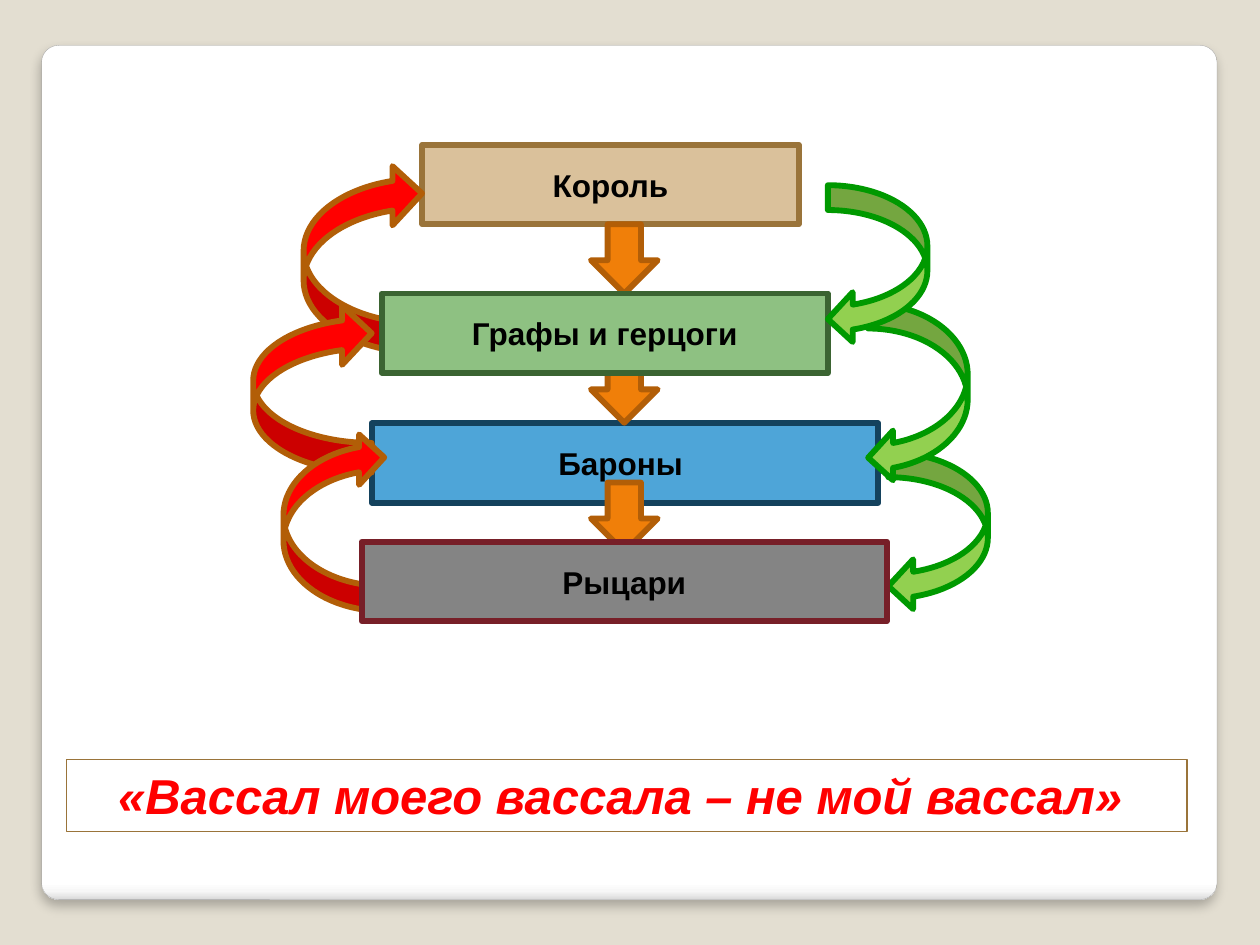
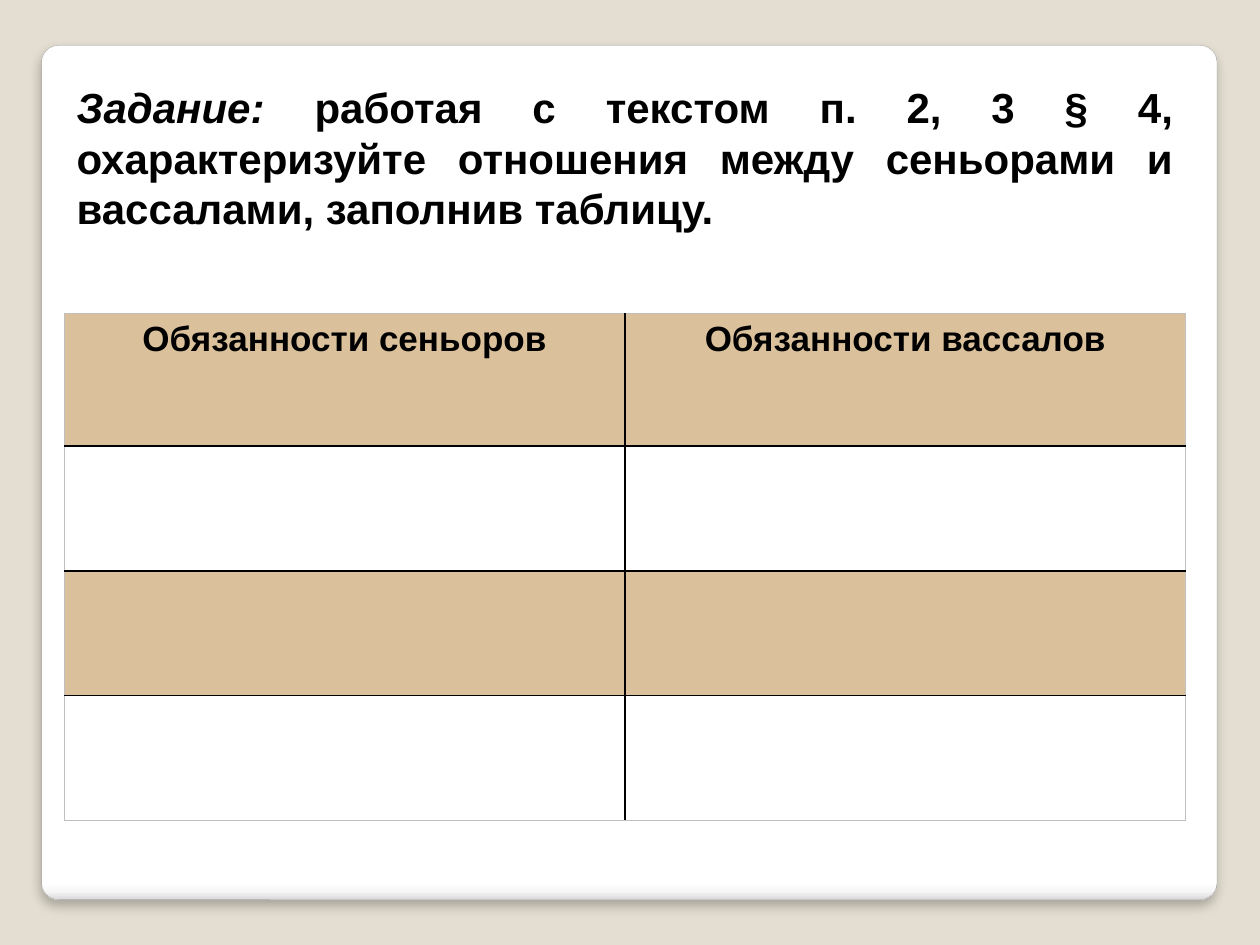
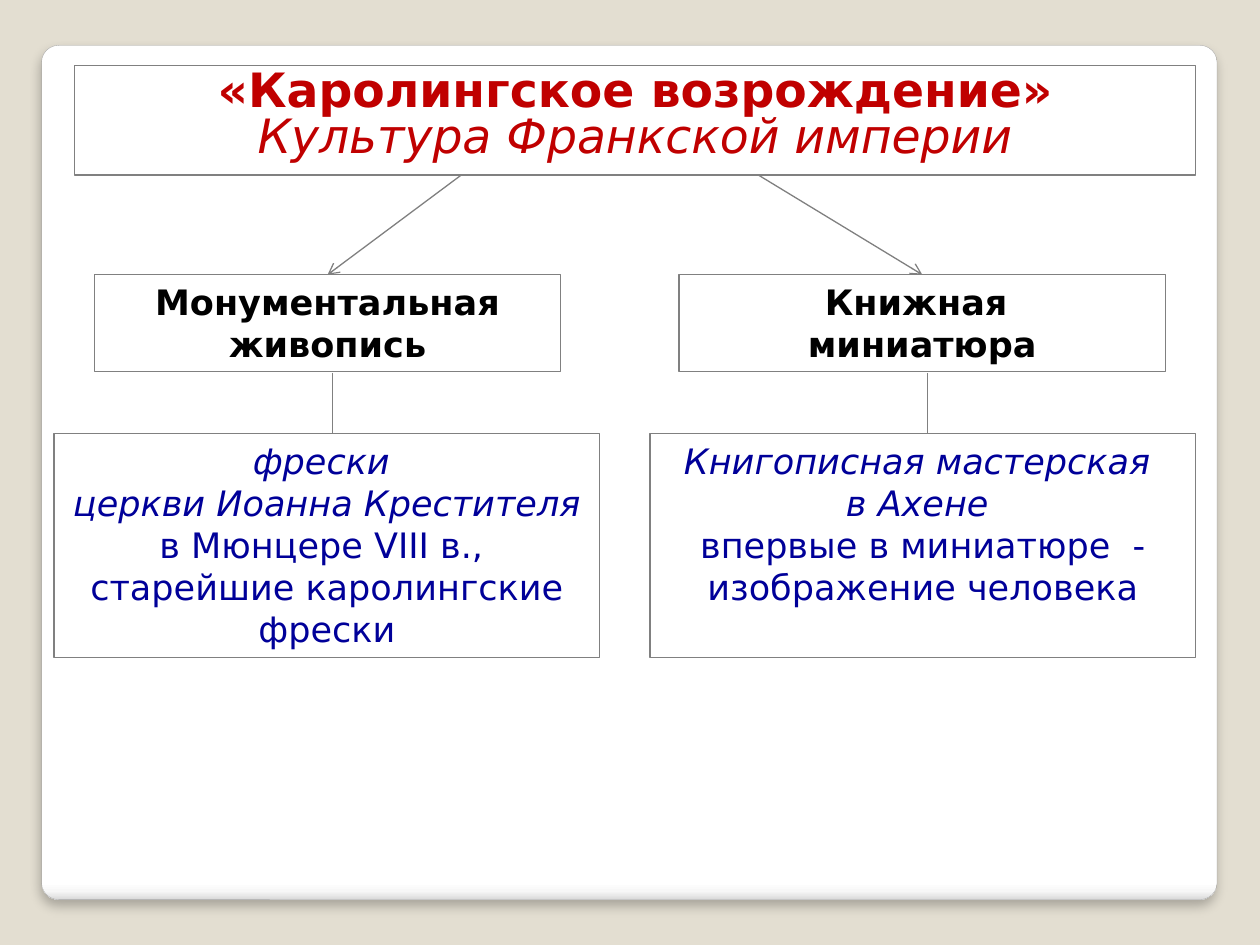
import lxml.etree
import pptx
import pptx.dml.color
import pptx.enum.shapes
import pptx.enum.text
import pptx.oxml.ns
import pptx.util

SLIDE_WIDTH = pptx.util.Inches(10)
SLIDE_HEIGHT = pptx.util.Inches(7.5)
COLUMN = SLIDE_WIDTH / 10
ROW = SLIDE_HEIGHT / 7.5
SHAPES = pptx.enum.shapes.MSO_SHAPE
ALIGN = pptx.enum.text.PP_ALIGN
ANCHOR = pptx.enum.text.MSO_ANCHOR

COLOURS = {
    "background": "E3DED1",
    "white": "FFFFFF",
    "panel_edge": "A4A4A4",
    "black": "000000",
    "sand": "DAC19B",
    "brown": "9A743A",
    "leaf": "8EC182",
    "forest": "3B6432",
    "sky": "4EA5D8",
    "navy": "14425D",
    "grey": "848484",
    "wine": "771F28",
    "orange": "F07F09",
    "rust": "B25E07",
    "lime": "92D050",
    "green": "009900",
    "red": "FF0000",
    "crimson": "C00000",
    "blue": "000099",
    "rule": "808080",
    "table_edge": "BFBFBF",
}
PANEL_STOPS = [(0, "FFFFFF"), (98, "FFFFFF"), (99, "F7F7F7"), (100, "DADADA")]

RANK_TEXT = {"name": "Arial", "size": 18, "bold": True, "italic": False, "colour": "black"}
QUOTE_TEXT = RANK_TEXT | {"size": 28, "italic": True, "colour": "red"}
TASK_TEXT = RANK_TEXT | {"size": 24}
HEADER_TEXT = RANK_TEXT | {"size": 20}
TITLE_TEXT = {"name": "DejaVu Sans", "size": 27, "bold": True, "italic": False, "colour": "crimson"}
BRANCH_TEXT = TITLE_TEXT | {"size": 20, "colour": "black"}
DETAIL_TEXT = BRANCH_TEXT | {"bold": False, "colour": "blue"}
ITALIC = {"italic": True}

HEAVY = 3.35
THIN = 0.75


def colour(name):
    return pptx.dml.color.RGBColor.from_string(COLOURS[name])


def place(left, top, width, height):
    return [round(value) for value in (left * COLUMN, top * ROW, width * COLUMN, height * ROW)]


def add_tag(parent, tag, **attributes):
    values = {key: str(value) for key, value in attributes.items()}
    return lxml.etree.SubElement(parent, pptx.oxml.ns.qn(tag), values)


def apply_format(target, values):
    for name, value in values.items():
        setattr(target, name, value)


def format_font(font, style):
    values = {key: value for key, value in style.items() if key != "colour"}
    apply_format(font, values | {"size": pptx.util.Pt(style["size"])})
    font.color.rgb = colour(style["colour"])


def write_text(frame, paragraphs, style, alignment=ALIGN.CENTER, spacing=None):
    frame.word_wrap = True
    for index, runs in enumerate(paragraphs):
        paragraph = frame.add_paragraph() if index else frame.paragraphs[0]
        apply_format(paragraph, {"alignment": alignment, "line_spacing": spacing})
        for text, changes in runs:
            run = paragraph.add_run()
            run.text = text
            format_font(run.font, style | changes)


def add_figure(slide, kind, box, fill, line, width, rotation=0):
    shape = slide.shapes.add_shape(kind, *place(*box))
    apply_format(shape, {"rotation": rotation})
    shape.shadow.inherit = False
    if fill:
        shape.fill.solid()
        shape.fill.fore_color.rgb = colour(fill)
    else:
        shape.fill.background()
    shape.line.color.rgb = colour(line)
    shape.line.width = pptx.util.Pt(width)
    return shape


def add_text_box(slide, box, paragraphs, style, line="rule", spacing=None):
    shape = add_figure(slide, SHAPES.RECTANGLE, box, None, line, THIN)
    shape.text_frame.vertical_anchor = ANCHOR.TOP
    write_text(shape.text_frame, paragraphs, style, spacing=spacing)


def add_rank(slide, title, box, fill, line):
    shape = add_figure(slide, SHAPES.RECTANGLE, box, fill, line, HEAVY)
    shape.text_frame.vertical_anchor = ANCHOR.MIDDLE
    write_text(shape.text_frame, [[(title, {})]], RANK_TEXT)


def add_service_arrow(slide, box):
    add_figure(slide, SHAPES.CURVED_DOWN_ARROW, box, "red", "rust", HEAVY, 270)


def add_grant_arrow(slide, box):
    add_figure(slide, SHAPES.CURVED_LEFT_ARROW, box, "lime", "green", HEAVY)


def add_link(slide, start, end, arrow=False):
    connector = slide.shapes.add_connector(
        pptx.enum.shapes.MSO_CONNECTOR.STRAIGHT, *place(*start, *end))
    connector.line.color.rgb = colour("rule")
    connector.line.width = pptx.util.Pt(THIN)
    if arrow:
        add_tag(connector.line._get_or_add_ln(), "a:tailEnd", type="arrow")
    add_tag(connector.element.spPr, "a:effectLst")


def add_panel(slide):
    panel = add_figure(slide, SHAPES.ROUNDED_RECTANGLE, (0.33, 0.36, 9.33, 6.78),
                       "white", "panel_edge", 0.16)
    panel.adjustments[0] = 0.02
    panel.fill.gradient()
    panel.fill.gradient_angle = 270
    properties = panel.element.spPr
    stops = properties.find(".//" + pptx.oxml.ns.qn("a:gsLst"))
    for stop in list(stops):
        stops.remove(stop)
    for position, value in PANEL_STOPS:
        add_tag(add_tag(stops, "a:gs", pos=position * 1000), "a:srgbClr", val=value)
    effects = properties.find(pptx.oxml.ns.qn("a:effectLst"))
    shadow = add_tag(effects, "a:outerShdw", blurRad=pptx.util.Pt(6), dist=pptx.util.Pt(4),
                     dir=5400000, algn="t", rotWithShape=0)
    add_tag(add_tag(shadow, "a:srgbClr", val=COLOURS["black"]), "a:alpha", val=25000)


def add_panel_slide(presentation):
    slide = presentation.slides.add_slide(presentation.slide_layouts[6])
    slide.background.fill.solid()
    slide.background.fill.fore_color.rgb = colour("background")
    add_panel(slide)
    return slide


def set_borders(cell, outer_sides):
    properties = cell._tc.get_or_add_tcPr()
    for index, side in enumerate(("lnL", "lnR", "lnT", "lnB")):
        edge, width = ("table_edge", 0.5) if side in outer_sides else ("black", 1)
        line = lxml.etree.Element(pptx.oxml.ns.qn("a:" + side), w=str(pptx.util.Pt(width)))
        add_tag(add_tag(line, "a:solidFill"), "a:srgbClr", val=COLOURS[edge])
        properties.insert(index, line)


def add_duty_table(slide, box, headers, row_heights):
    rows, columns = len(row_heights), len(headers)
    table = slide.shapes.add_table(rows, columns, *place(*box)).table
    apply_format(table, {"first_row": False, "horz_banding": False})
    for row, height in enumerate(row_heights):
        table.rows[row].height = round(height * ROW)
        for column in range(columns):
            cell = table.cell(row, column)
            if row % 2:
                cell.fill.background()
            else:
                cell.fill.solid()
                cell.fill.fore_color.rgb = colour("sand")
            sides = {"lnL": column == 0, "lnR": column == columns - 1,
                     "lnT": row == 0, "lnB": row == rows - 1}
            set_borders(cell, [side for side, outer in sides.items() if outer])
    for column, header in enumerate(headers):
        write_text(table.cell(0, column).text_frame, [[(header, {})]], HEADER_TEXT)


def build_hierarchy(presentation):
    slide = add_panel_slide(presentation)
    add_rank(slide, "Король", (3.35, 1.15, 2.99, 0.63), "sand", "brown")
    add_rank(slide, "Бароны ", (2.95, 3.36, 4.02, 0.63), "sky", "navy")
    for step in range(3):
        add_figure(slide, SHAPES.DOWN_ARROW, (4.69, 1.78 + step * 1.025, 0.53, 0.55),
                   "orange", "rust", HEAVY)
    add_grant_arrow(slide, (7.05, 3.59, 0.79, 1.26))
    add_service_arrow(slide, (2.13, 1.58, 1.5, 0.94))
    add_rank(slide, "Графы и герцоги", (3.03, 2.33, 3.54, 0.63), "leaf", "forest")
    add_service_arrow(slide, (1.81, 2.61, 1.34, 0.94))
    add_service_arrow(slide, (1.94, 3.74, 1.42, 0.8))
    add_grant_arrow(slide, (6.89, 2.41, 0.79, 1.42))
    add_grant_arrow(slide, (6.57, 1.47, 0.79, 1.26))
    add_rank(slide, "Рыцари", (2.87, 4.3, 4.17, 0.63), "grey", "wine")
    add_text_box(slide, (0.53, 6.03, 8.89, 0.57),
                 [[("«Вассал моего вассала – не мой вассал» ", {})]], QUOTE_TEXT, "brown")


def build_task(presentation):
    slide = add_panel_slide(presentation)
    task = slide.shapes.add_textbox(*place(0.51, 0.6, 8.9, 1.31))
    write_text(task.text_frame, [[
        ("Задание:", ITALIC),
        (" работая с текстом п. 2, 3 § 4, охарактеризуйте отношения между сеньорами "
         "и вассалами, заполнив таблицу. ", {}),
    ]], TASK_TEXT, ALIGN.JUSTIFY)
    add_duty_table(slide, (0.51, 2.49, 8.9, 4.02),
                   ["Обязанности сеньоров", "Обязанности вассалов"], [1.05] + [0.99] * 3)


def build_culture(presentation):
    slide = add_panel_slide(presentation)
    add_text_box(slide, (0.59, 0.52, 8.9, 0.87), [
        [("«Каролингское возрождение»", {})],
        [("Культура Франкской империи", {"bold": False, "italic": True})],
    ], TITLE_TEXT, spacing=0.8)
    add_text_box(slide, (0.75, 2.18, 3.7, 0.77),
                 [[("Монументальная живопись", {})]], BRANCH_TEXT)
    add_text_box(slide, (5.39, 2.18, 3.86, 0.77),
                 [[("Книжная ", {})], [("миниатюра", {})]], BRANCH_TEXT)
    add_text_box(slide, (0.43, 3.44, 4.33, 1.78), [
        [("фрески ", ITALIC)],
        [("церкви Иоанна Крестителя ", ITALIC), ("в Мюнцере VIII в., ", {})],
        [("старейшие каролингские фрески", {})],
    ], DETAIL_TEXT)
    add_text_box(slide, (5.16, 3.44, 4.33, 1.78), [
        [("Книгописная мастерская ", ITALIC)],
        [("в Ахене ", ITALIC)],
        [("впервые в миниатюре  - изображение человека", {})],
    ], DETAIL_TEXT)
    add_link(slide, (3.66, 1.39), (2.6, 2.18), arrow=True)
    add_link(slide, (6.02, 1.39), (7.32, 2.18), arrow=True)
    for centre in (2.64, 7.36):
        add_link(slide, (centre, 2.96), (centre, 3.44))


def main():
    presentation = pptx.Presentation()
    apply_format(presentation, {"slide_width": SLIDE_WIDTH, "slide_height": SLIDE_HEIGHT})
    build_hierarchy(presentation)
    build_task(presentation)
    build_culture(presentation)
    presentation.save("out.pptx")


if __name__ == "__main__":
    main()
